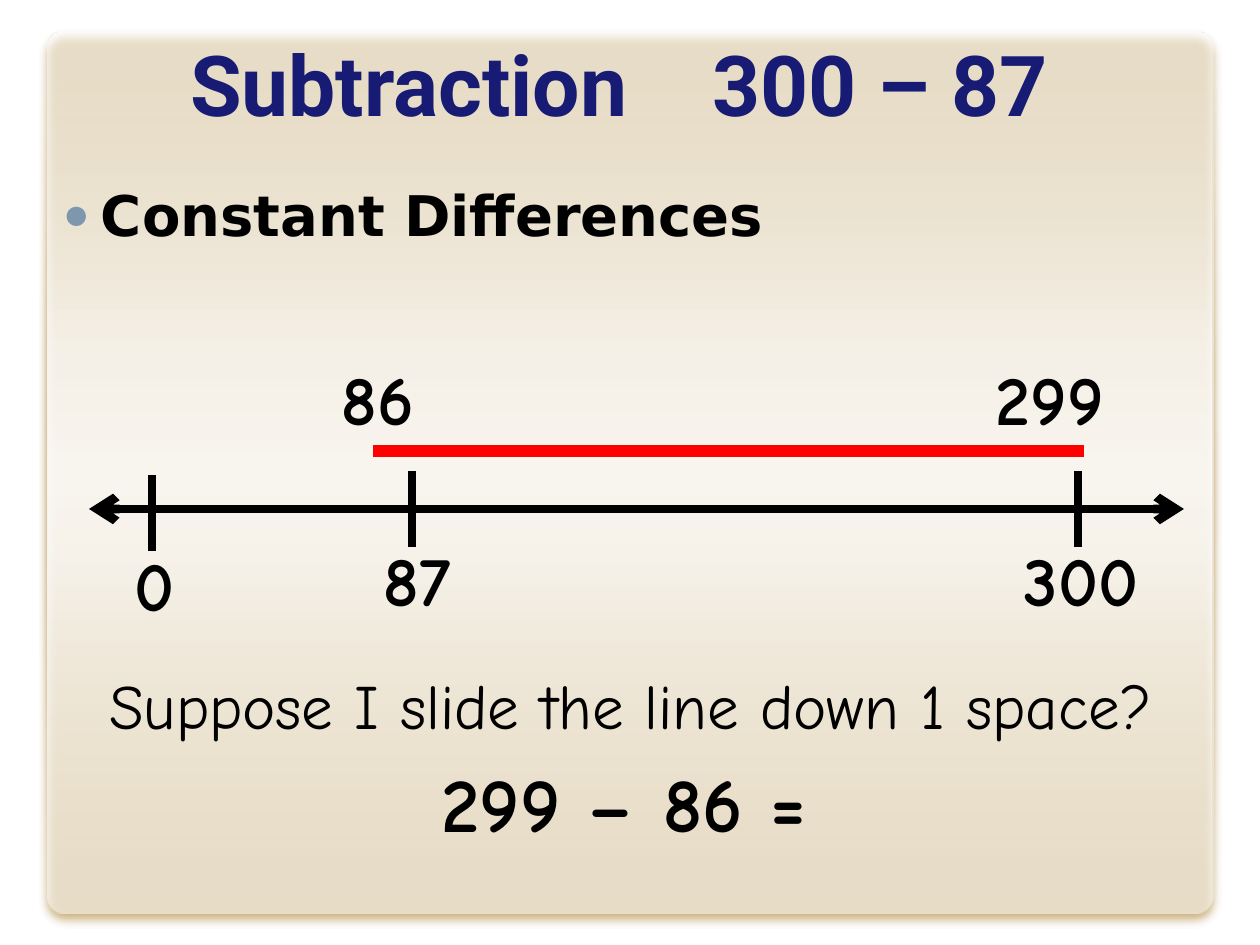
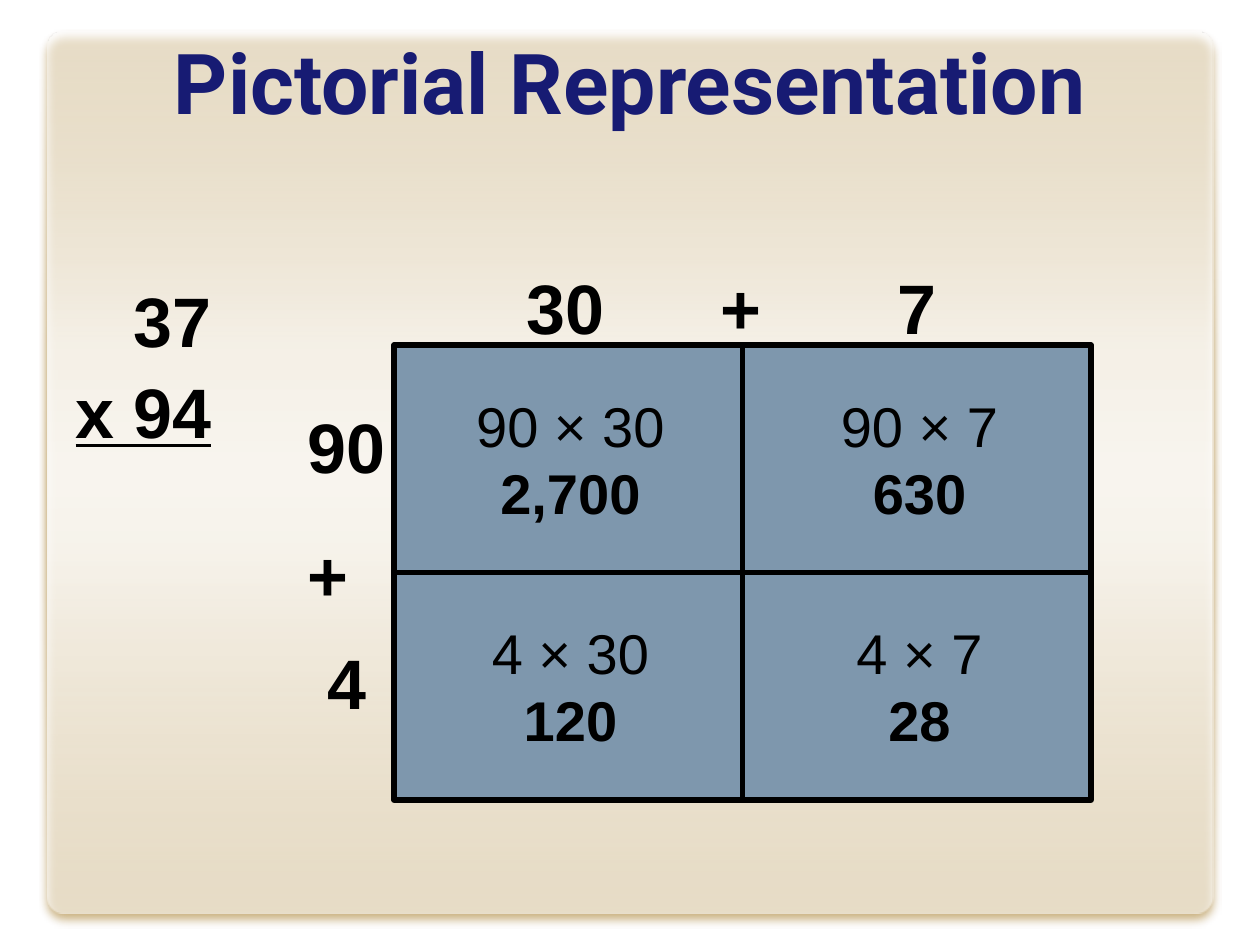
import pptx
import pptx.util
import pptx.dml.color
import pptx.enum.shapes
import pptx.enum.text
import pptx.oxml
import pptx.oxml.ns
from lxml import etree

SCALE = 914400 / 126
SLIDE_SIZE = (1260, 945)
NAVY, BLACK, RED, STEEL = "171B73", "000000", "FF0000", "7E97AD"
SANS, HAND, HEADING, BODY = "Arial", "Comic Neue", "Roboto", "DejaVu Sans"

PANEL = (48, 32, 1165, 882)
PANEL_STOPS = [(0, 50), (35, 87), (50, 92), (60, 89), (100, 55)]
PANEL_SHADOW = "956400"

SUBTRACTION_TITLE = [("Subtraction", (159, 9, 500, 147)), ("300 – 87", (630, 9, 500, 147))]
PICTORIAL_TITLE = [("Pictorial Representation", (21, 22, 1218, 118))]

STRATEGY = ("Constant Differences", (32, 174, 1197, 80))
AXIS = (89, 1184, 509)
TICKS = [(152, 475), (412, 471), (1078, 471)]
TICK_LENGTH = 76
DIFFERENCE_BARS = [(407, 1084), (373, 1050)]
BAR_Y = 451
NUMBER_LABELS = [
    ("0", (108, 535, 92, 97)),
    ("87", (354, 530, 126, 97)),
    ("300", (998, 530, 166, 97)),
    ("299", (967, 349, 166, 97)),
    ("86", (315, 349, 126, 97)),
]
QUESTION = ("Suppose I slide the line down 1 space?", (44, 660, 1173, 89))
EXPRESSION = ("299 – 86 =", (57, 749, 1134, 106))

AREA = (394, 345, 697, 455)
COLUMN_FACTORS = [30, 7]
ROW_FACTORS = [90, 4]
CELL_LEFTS = [398, 747]
CELL_TOP, ROW_STEP, RESULT_STEP = 385, 227, 67
CELL_SIZE = (345, 81)
FACTOR_LABELS = [
    ("30", 565, 258), ("+", 741, 258), ("7", 917, 258),
    ("90", 346, 397), ("+", 328, 525), ("4", 347, 633),
]
FACTOR_LABEL_SIZE = (120, 93)
PROBLEM = (["37", "x 94"], (24, 271, 200, 189))


def px(length):
    return pptx.util.Emu(round(length * SCALE))


def color(value):
    return pptx.dml.color.RGBColor.from_string(value)


def add_text(page, lines, place, size, font, ink=BLACK, bold=True, align="CENTER", anchor="TOP"):
    box = page.shapes.add_textbox(*map(px, place))
    frame = box.text_frame
    frame.word_wrap = True
    frame.vertical_anchor = getattr(pptx.enum.text.MSO_ANCHOR, anchor)
    for index, line in enumerate(lines):
        para = frame.add_paragraph() if index else frame.paragraphs[0]
        para.alignment = getattr(pptx.enum.text.PP_ALIGN, align)
        span = para.add_run()
        span.text = line
        span.font.size = pptx.util.Pt(size)
        span.font.name = font
        span.font.bold = bold
        span.font.color.rgb = color(ink)
    return frame


def add_line(page, start, end, ink, width, arrows=False):
    line = page.shapes.add_connector(
        pptx.enum.shapes.MSO_CONNECTOR.STRAIGHT, *map(px, (*start, *end)))
    line.line.color.rgb = color(ink)
    line.line.width = pptx.util.Pt(width)
    properties = line._element.spPr
    if arrows:
        outline = properties.find(pptx.oxml.ns.qn("a:ln"))
        for name in ("a:headEnd", "a:tailEnd"):
            etree.SubElement(outline, pptx.oxml.ns.qn(name), type="arrow")
    etree.SubElement(properties, pptx.oxml.ns.qn("a:effectLst"))
    return line


def add_panel(page):
    panel = page.shapes.add_shape(
        pptx.enum.shapes.MSO_SHAPE.ROUNDED_RECTANGLE, *map(px, PANEL))
    panel.adjustments[0] = 0.02
    panel.line.fill.background()
    panel.shadow.inherit = False
    panel.fill.solid()
    stops = "".join(
        f'<a:gs pos="{at * 1000}"><a:srgbClr val="FFFFFF">'
        f'<a:alpha val="{opacity * 1000}"/></a:srgbClr></a:gs>'
        for at, opacity in PANEL_STOPS)
    namespace = pptx.oxml.ns.nsdecls("a")
    gradient = pptx.oxml.parse_xml(
        f'<a:gradFill {namespace} rotWithShape="1"><a:gsLst>{stops}</a:gsLst>'
        '<a:lin ang="5400000" scaled="0"/></a:gradFill>')
    shadow = pptx.oxml.parse_xml(
        f'<a:outerShdw {namespace} blurRad="{pptx.util.Pt(5)}" dist="{pptx.util.Pt(3.6)}" '
        f'dir="5400000" algn="t" rotWithShape="0"><a:srgbClr val="{PANEL_SHADOW}">'
        '<a:alpha val="90000"/></a:srgbClr></a:outerShdw>')
    properties = panel._element.spPr
    properties.replace(properties.find(pptx.oxml.ns.qn("a:solidFill")), gradient)
    properties.find(pptx.oxml.ns.qn("a:effectLst")).append(shadow)


def add_page(deck, title):
    page = deck.slides.add_slide(deck.slide_layouts[6])
    add_panel(page)
    for words, place in title:
        add_text(page, [words], place, 48, HEADING, NAVY, anchor="MIDDLE")
    return page


def add_bullet(para):
    properties = para._p.get_or_add_pPr()
    properties.set("marL", str(px(63)))
    properties.set("indent", str(px(-38)))
    bullet_color = etree.SubElement(properties, pptx.oxml.ns.qn("a:buClr"))
    etree.SubElement(bullet_color, pptx.oxml.ns.qn("a:srgbClr"), val=STEEL)
    for name, key, value in [
        ("a:buSzPct", "val", "80000"),
        ("a:buFont", "typeface", SANS),
        ("a:buChar", "char", "●"),
    ]:
        etree.SubElement(properties, pptx.oxml.ns.qn(name), {key: value})


def build_subtraction(deck):
    page = add_page(deck, SUBTRACTION_TITLE)
    words, place = STRATEGY
    frame = add_text(page, [words], place, 32, BODY, align="LEFT")
    frame.margin_left = px(6)
    add_bullet(frame.paragraphs[0])
    left, right, axis_y = AXIS
    add_line(page, (left, axis_y), (right, axis_y), BLACK, 5, arrows=True)
    for x, top in TICKS:
        add_line(page, (x, top), (x, top + TICK_LENGTH), BLACK, 5)
    for start, end in DIFFERENCE_BARS:
        add_line(page, (start, BAR_Y), (end, BAR_Y), RED, 7)
    for number, place in NUMBER_LABELS:
        add_text(page, [number], place, 40, HAND)
    words, place = QUESTION
    add_text(page, [words], place, 36, HAND, bold=False)
    words, place = EXPRESSION
    add_text(page, [words], place, 44, HAND)


def build_area_model(deck):
    page = add_page(deck, PICTORIAL_TITLE)
    area = page.shapes.add_shape(pptx.enum.shapes.MSO_SHAPE.RECTANGLE, *map(px, AREA))
    area.shadow.inherit = False
    area.fill.solid()
    area.fill.fore_color.rgb = color(STEEL)
    area.line.color.rgb = color(BLACK)
    area.line.width = pptx.util.Pt(3)
    for first_side, last_side in [(0, 2), (1, 3)]:
        divider = add_line(page, (0, 0), (0, 0), BLACK, 3)
        divider.begin_connect(area, first_side)
        divider.end_connect(area, last_side)
    for row, row_factor in enumerate(ROW_FACTORS):
        top = CELL_TOP + row * ROW_STEP
        for left, column_factor in zip(CELL_LEFTS, COLUMN_FACTORS):
            product = f"{row_factor} × {column_factor}"
            result = f"{row_factor * column_factor:,}"
            add_text(page, [product], (left, top, *CELL_SIZE), 32, SANS, bold=False)
            add_text(page, [result], (left, top + RESULT_STEP, *CELL_SIZE), 32, SANS)
    width, height = FACTOR_LABEL_SIZE
    for words, center, top in FACTOR_LABELS:
        add_text(page, [words], (center - width // 2, top, width, height), 40, SANS)
    lines, place = PROBLEM
    frame = add_text(page, lines, place, 40, SANS, align="RIGHT")
    multiplier = frame.paragraphs[1]
    multiplier.space_before = pptx.util.Pt(4)
    multiplier.runs[0].font.underline = True


def main():
    deck = pptx.Presentation()
    deck.slide_width, deck.slide_height = map(px, SLIDE_SIZE)
    build_subtraction(deck)
    build_area_model(deck)
    deck.save("out.pptx")


if __name__ == "__main__":
    main()
